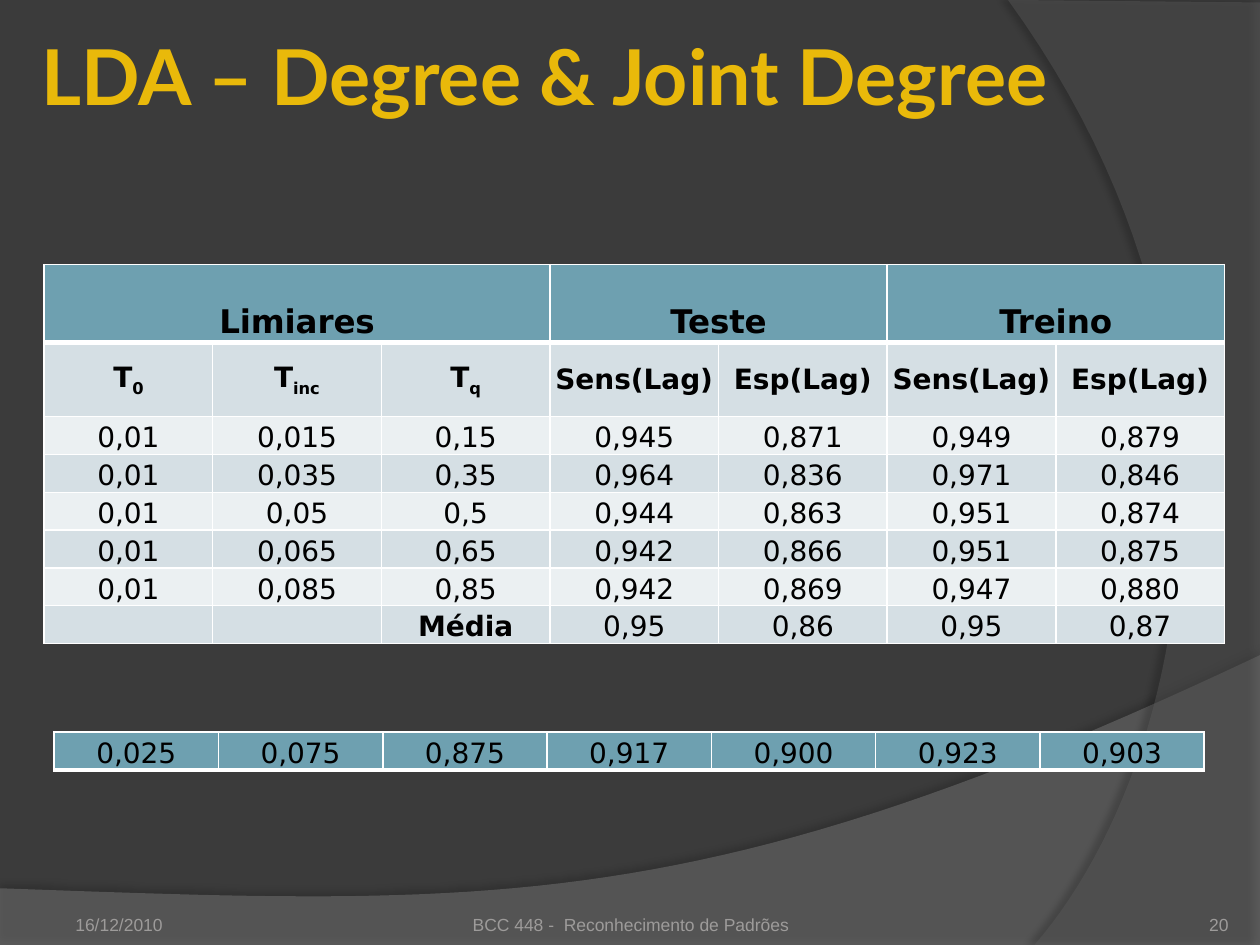
from dataclasses import dataclass

from lxml import etree
from pptx import Presentation
from pptx.dml.color import RGBColor
from pptx.enum import text
from pptx.oxml import ns
from pptx.util import Inches, Pt

BACKGROUND = RGBColor(0x3B, 0x3B, 0x3B)
WAVE_GRAY = RGBColor(0x7F, 0x7F, 0x7F)
ARC_GRAY = RGBColor(0x5E, 0x5E, 0x5E)
FOOTER_GRAY = RGBColor(0x9D, 0x9B, 0x9A)
GOLD = RGBColor(0xE9, 0xB9, 0x0A)
BLACK = RGBColor(0, 0, 0)
WHITE = RGBColor(0xFF, 0xFF, 0xFF)
TEAL = RGBColor(0x6E, 0xA0, 0xB0)
BAND_DARK = RGBColor(0xD5, 0xDF, 0xE4)
BAND_LIGHT = RGBColor(0xEB, 0xF0, 0xF2)

TABLE_FONT = "DejaVu Sans"
CURVE_STEPS = 48
Point = tuple[float, float]


@dataclass
class Backdrop:
    """Straight corners closed by one cubic curve from the last corner."""
    corners: list[Point]
    curve: tuple[Point, Point, Point]
    color: RGBColor
    opacity: int
    shadow_opacity: int
    shadow_distance: float
    shadow_angle: int


@dataclass
class Label:
    content: str
    frame: tuple[float, float, float, float]
    insets: tuple[float, float, float, float]
    font: str
    size: int
    color: RGBColor
    anchor: text.MSO_ANCHOR = text.MSO_ANCHOR.BOTTOM
    align: text.PP_ALIGN = text.PP_ALIGN.LEFT
    bold: bool = False


@dataclass
class CellStyle:
    fill: RGBColor
    size: int = 16
    bold: bool = False
    anchor: text.MSO_ANCHOR = text.MSO_ANCHOR.BOTTOM
    bottom_line: float = 1


BACKDROPS = [
    Backdrop([(0, 7.05), (0, 7.5), (10, 7.5), (10, 5.2)],
             ((5.59, 7.29), (3.91, 7.19), (0, 7.05)), WAVE_GRAY, 45, 35, 3.5, 270),
    Backdrop([(8, 0), (10, 0.02), (10, 7.5), (8.21, 7.5)],
             ((9.35, 6.19), (10.18, 3), (8, 0)), ARC_GRAY, 40, 45, 4, 180),
]

LABELS = [
    Label("16/12/2010", (0.5, 7.02, 2.33, 0.4), (0.1, 0.05, 0.1, 0),
          "Arial", 10, FOOTER_GRAY),
    Label("BCC 448 -  Reconhecimento de Padrões", (3.42, 7.02, 3.17, 0.4),
          (0, 0.05, 0, 0), "Arial", 10, FOOTER_GRAY, align=text.PP_ALIGN.CENTER),
    Label("LDA – Degree & Joint Degree", (0.28, -0.03, 9.45, 1.25),
          (0.05, 0.05, 0.05, 0.05), "Lato", 44, GOLD, text.MSO_ANCHOR.MIDDLE, bold=True),
    Label("20", (8.92, 7.02, 0.83, 0.4), (0, 0, 0, 0),
          "Arial", 10, FOOTER_GRAY, align=text.PP_ALIGN.RIGHT),
]

# An underscore separates a symbol from its subscript
RESULTS = [
    ["Limiares", "", "", "Teste", "", "Treino", ""],
    ["T_0", "T_inc", "T_q", "Sens(Lag)", "Esp(Lag)", "Sens(Lag)", "Esp(Lag)"],
    ["0,01", "0,015", "0,15", "0,945", "0,871", "0,949", "0,879"],
    ["0,01", "0,035", "0,35", "0,964", "0,836", "0,971", "0,846"],
    ["0,01", "0,05", "0,5", "0,944", "0,863", "0,951", "0,874"],
    ["0,01", "0,065", "0,65", "0,942", "0,866", "0,951", "0,875"],
    ["0,01", "0,085", "0,85", "0,942", "0,869", "0,947", "0,880"],
    ["", "", "Média", "0,95", "0,86", "0,95", "0,87"],
]
HEADER_GROUPS = [(0, 2), (3, 4), (5, 6)]
BEST_RESULT = [["0,025", "0,075", "0,875", "0,917", "0,900", "0,923", "0,903"]]

GROUP_STYLE = CellStyle(TEAL, 32, True, text.MSO_ANCHOR.MIDDLE, 3)
SYMBOL_STYLE = CellStyle(BAND_DARK, bold=True, anchor=text.MSO_ANCHOR.MIDDLE)
LIGHT_STYLE = CellStyle(BAND_LIGHT)
DARK_STYLE = CellStyle(BAND_DARK)
BEST_STYLE = CellStyle(TEAL, bottom_line=3)


def add_node(parent, tag: str, **attributes):
    return etree.SubElement(parent, ns.qn(tag), {k: str(v) for k, v in attributes.items()})


def curve_points(start: Point, curve: tuple[Point, Point, Point]) -> list[Point]:
    points = []
    for step in range(1, CURVE_STEPS + 1):
        t = step / CURVE_STEPS
        weights = ((1 - t) ** 3, 3 * t * (1 - t) ** 2, 3 * t * t * (1 - t), t ** 3)
        points.append(tuple(sum(w * p[axis] for w, p in zip(weights, (start, *curve)))
                            for axis in (0, 1)))
    return points


def draw_backdrop(page, item: Backdrop) -> None:
    outline = item.corners + curve_points(item.corners[-1], item.curve)
    points = [(Inches(x), Inches(y)) for x, y in outline]
    builder = page.shapes.build_freeform(*points[0])
    builder.add_line_segments(points[1:], close=True)
    shape = builder.convert_to_shape()
    shape.fill.solid()
    shape.fill.fore_color.rgb = item.color
    shape.line.fill.background()
    shape.shadow.inherit = False
    properties = shape.element.spPr
    fill_color = properties.find(ns.qn("a:solidFill"))[0]
    add_node(fill_color, "a:alpha", val=item.opacity * 1000)
    shadow = add_node(properties.find(ns.qn("a:effectLst")), "a:outerShdw",
                      blurRad=Pt(4), dist=Pt(item.shadow_distance),
                      dir=item.shadow_angle * 60000, algn="ctr", rotWithShape=0)
    shadow_color = add_node(shadow, "a:srgbClr", val=BLACK)
    add_node(shadow_color, "a:alpha", val=item.shadow_opacity * 1000)


def set_margins(target, insets: tuple[float, float, float, float]) -> None:
    for side, inset in zip(("left", "top", "right", "bottom"), insets):
        setattr(target, f"margin_{side}", Inches(inset))


def set_font(font, name: str, size: int, color: RGBColor, bold: bool) -> None:
    font.name, font.size, font.bold = name, Pt(size), bold
    font.color.rgb = color


def draw_label(page, label: Label) -> None:
    box = page.shapes.add_textbox(*map(Inches, label.frame))
    frame = box.text_frame
    frame.word_wrap = True
    frame.vertical_anchor = label.anchor
    set_margins(frame, label.insets)
    para = frame.paragraphs[0]
    para.text, para.alignment = label.content, label.align
    set_font(para.font, label.font, label.size, label.color, label.bold)


def set_borders(cell, bottom_line: float, top_line: float) -> None:
    properties = cell._tc.get_or_add_tcPr()
    widths = {"a:lnL": 1, "a:lnR": 1, "a:lnT": top_line, "a:lnB": bottom_line}
    for position, (tag, width) in enumerate(widths.items()):
        line = add_node(properties, tag, w=Pt(width))
        add_node(add_node(line, "a:solidFill"), "a:srgbClr", val=WHITE)
        properties.insert(position, line)


def fill_cell(cell, content: str, style: CellStyle, top_line: float) -> None:
    set_margins(cell, (0.01, 0.01, 0.01, 0))
    cell.vertical_anchor = style.anchor
    cell.fill.solid()
    cell.fill.fore_color.rgb = style.fill
    set_borders(cell, style.bottom_line, top_line)
    para = cell.text_frame.paragraphs[0]
    para.alignment = text.PP_ALIGN.CENTER
    set_font(para.font, TABLE_FONT, style.size, BLACK, style.bold or content == "Média")
    base, _, subscript = content.partition("_")
    for part, lowered in ((base, style is GROUP_STYLE), (subscript, True)):
        if part:
            span = para.add_run()
            span.text = part
            if lowered:
                span.font._element.set("baseline", "-25000")


def draw_table(page, frame: tuple[float, float, float, float], rows: list[list[str]],
               styles: list[CellStyle], heights: list[float],
               groups: list[tuple[int, int]]) -> None:
    table = page.shapes.add_table(len(rows), len(rows[0]), *map(Inches, frame)).table
    for row, height in zip(table.rows, heights):
        row.height = Inches(height)
    for first, last in groups:
        table.cell(0, first).merge(table.cell(0, last))
    top_line = 1
    for r, (values, style) in enumerate(zip(rows, styles)):
        for c, value in enumerate(values):
            fill_cell(table.cell(r, c), value, style, top_line)
        top_line = style.bottom_line


def main() -> None:
    deck = Presentation()
    deck.slide_width, deck.slide_height = Inches(10), Inches(7.5)
    page = deck.slides.add_slide(deck.slide_layouts[6])
    page.background.fill.solid()
    page.background.fill.fore_color.rgb = BACKGROUND

    # Curved backdrop, title and footer
    for item in BACKDROPS:
        draw_backdrop(page, item)
    for label in LABELS:
        draw_label(page, label)

    # Results by threshold, then the best one
    styles = [GROUP_STYLE, SYMBOL_STYLE] + [LIGHT_STYLE, DARK_STYLE] * 3
    draw_table(page, (0.35, 2.1, 9.37, 3.01), RESULTS, styles,
               [0.59] * 2 + [0.3] * 6, HEADER_GROUPS)
    draw_table(page, (0.43, 5.81, 9.13, 0.3), BEST_RESULT, [BEST_STYLE], [0.3], [])
    deck.save("out.pptx")


if __name__ == "__main__":
    main()
